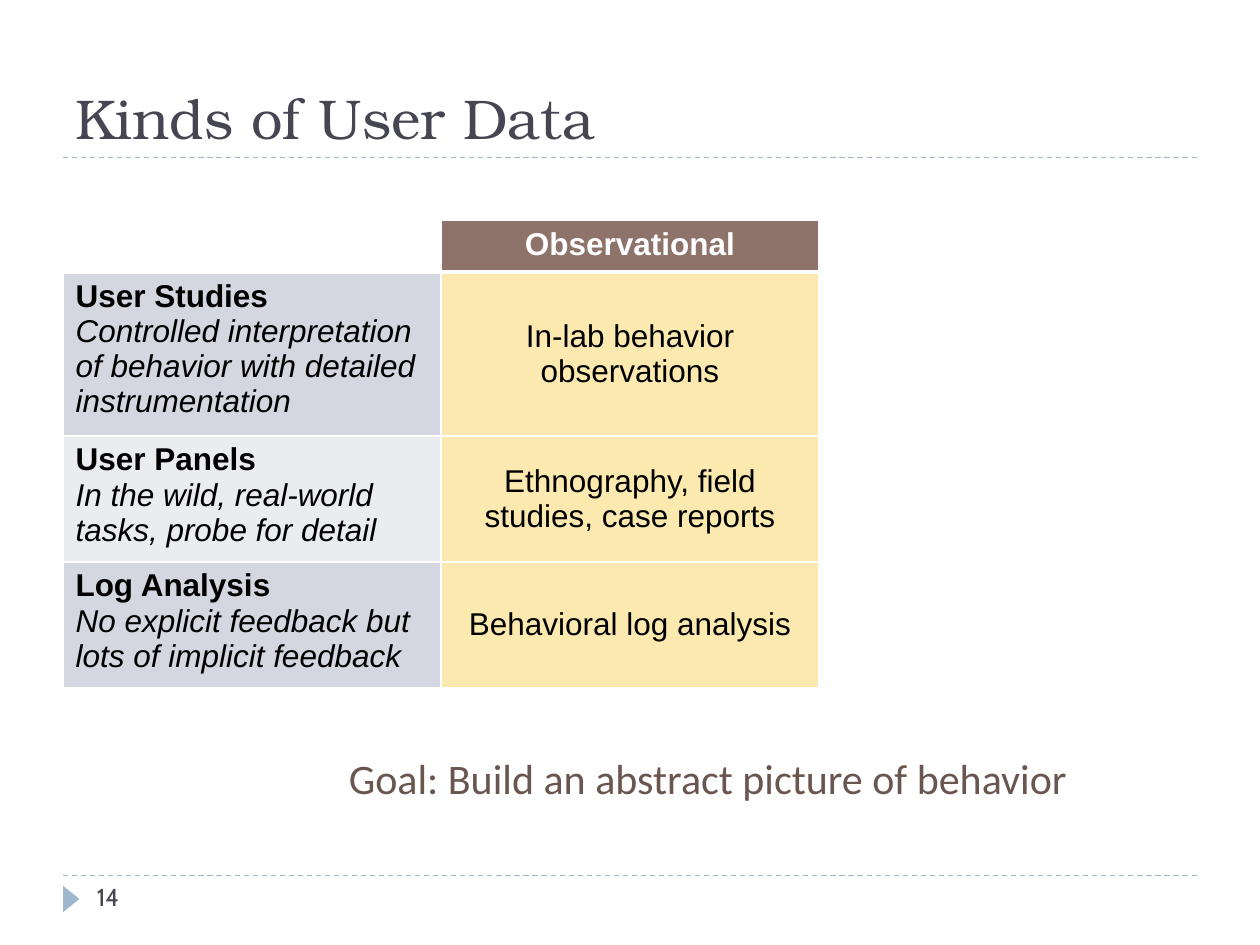
from dataclasses import dataclass

from lxml import etree
from pptx import Presentation
from pptx.dml.color import RGBColor
from pptx.enum.dml import MSO_LINE
from pptx.enum.shapes import MSO_CONNECTOR, MSO_SHAPE
from pptx.enum.text import MSO_ANCHOR, MSO_AUTO_SIZE, PP_ALIGN
from pptx.oxml.ns import qn
from pptx.util import Pt

PX = 9144  # 100 px to the inch

STRAIGHT = MSO_CONNECTOR.STRAIGHT
TRIANGLE = MSO_SHAPE.ISOSCELES_TRIANGLE
DASH = MSO_LINE.DASH
TOP, MIDDLE, BOTTOM = MSO_ANCHOR.TOP, MSO_ANCHOR.MIDDLE, MSO_ANCHOR.BOTTOM
LEFT, CENTER = PP_ALIGN.LEFT, PP_ALIGN.CENTER

WHITE = RGBColor(0xFF, 0xFF, 0xFF)
BLACK = RGBColor(0x00, 0x00, 0x00)
SLATE = RGBColor(0x46, 0x46, 0x53)
BLUE = RGBColor(0x9F, 0xB8, 0xCD)
BROWN = RGBColor(0x8E, 0x73, 0x6A)
DARK_BROWN = RGBColor(0x6A, 0x56, 0x50)
CREAM = RGBColor(0xFC, 0xE9, 0xAF)
BANDS = (RGBColor(0xD5, 0xD7, 0xE0), RGBColor(0xEB, 0xEC, 0xF0))

TITLE_FONT = {"name": "TeX Gyre Bonum", "size": Pt(32)}
NUMBER_FONT = {"name": "Cabin", "size": Pt(14)}
GOAL_FONT = {"name": "Calibri", "size": Pt(24)}
CELL_FONT = {"name": "Arial", "size": Pt(18), "bold": False, "italic": False}
BOLD = CELL_FONT | {"bold": True}
ITALIC = CELL_FONT | {"italic": True}


@dataclass
class Method:
    name: str
    detail: str
    observation: str
    height: int


METHODS = [
    Method("User Studies",
           "Controlled interpretation of behavior with detailed instrumentation",
           "In-lab behavior observations", 130),
    Method("User Panels", "In the wild, real-world tasks, probe for detail",
           "Ethnography, field studies, case reports", 100),
    Method("Log Analysis", "No explicit feedback but lots of implicit feedback",
           "Behavioral log analysis", 100),
]
HEADER_HEIGHT = 41
COLUMN_WIDTH = 300


def write(p, text: str, font: dict, color: RGBColor, align=LEFT) -> None:
    p.alignment = align
    r = p.add_run()
    r.text = text
    for key, value in font.items():
        setattr(r.font, key, value)
    r.font.color.rgb = color


def place(s, left: int, top: int, width: int, height: int) -> None:
    s.left, s.top, s.width, s.height = (v * PX for v in (left, top, width, height))


def add_rule(shapes, y: int) -> None:
    s = shapes.add_connector(STRAIGHT, 50 * PX, y * PX, 950 * PX, y * PX)
    s.line.color.rgb = BLUE
    s.line.width = Pt(0.75)
    s.line.dash_style = DASH
    etree.SubElement(s._element.spPr, qn("a:effectLst"))


def add_text(shapes, box: tuple, text: str, font: dict, color: RGBColor, wrap: bool) -> None:
    s = shapes.add_textbox(*(v * PX for v in box))
    s.text_frame.word_wrap = wrap
    write(s.text_frame.paragraphs[0], text, font, color)


def set_borders(cell, top: int = 1, bottom: int = 1) -> None:
    tc_pr = cell._tc.get_or_add_tcPr()
    for tag, points in (("lnL", 1), ("lnR", 1), ("lnT", top), ("lnB", bottom)):
        ln = etree.SubElement(tc_pr, qn(f"a:{tag}"), w=str(Pt(points)))
        fill = etree.SubElement(ln, qn("a:solidFill"))
        etree.SubElement(fill, qn("a:srgbClr"), val=str(WHITE))


def fill_cell(cell, color: RGBColor, lines: list, align=LEFT, anchor=TOP) -> None:
    cell.fill.solid()
    cell.fill.fore_color.rgb = color
    cell.vertical_anchor = anchor
    tf = cell.text_frame
    for i, (text, font, text_color) in enumerate(lines):
        p = tf.add_paragraph() if i else tf.paragraphs[0]
        write(p, text, font, text_color, align)


def add_methods_table(shapes) -> None:
    heights = [HEADER_HEIGHT] + [m.height for m in METHODS]
    frame = shapes.add_table(len(heights), 2, 50 * PX, 175 * PX,
                             2 * COLUMN_WIDTH * PX, sum(heights) * PX)
    table = frame.table
    table.first_row = table.horz_banding = False
    for column in table.columns:
        column.width = COLUMN_WIDTH * PX
    for i, (row, height) in enumerate(zip(table.rows, heights)):
        row.height = height * PX
        for cell in row.cells:
            set_borders(cell, top=3 if i == 1 else 1, bottom=3 if i == 0 else 1)

    # Header row
    table.cell(0, 0).fill.background()
    fill_cell(table.cell(0, 1), BROWN, [("Observational", BOLD, WHITE)], CENTER)

    # One row for each method
    for i, m in enumerate(METHODS):
        fill_cell(table.cell(i + 1, 0), BANDS[i % 2],
                  [(m.name, BOLD, BLACK), (m.detail, ITALIC, BLACK)])
        fill_cell(table.cell(i + 1, 1), CREAM,
                  [(m.observation, CELL_FONT, BLACK)], CENTER, MIDDLE)


def main() -> None:
    prs = Presentation()
    prs.slide_width, prs.slide_height = 1000 * PX, 750 * PX
    shapes = prs.slides.add_slide(prs.slide_layouts[5]).shapes

    # Rules and page marker
    for y in (695, 125):
        add_rule(shapes, y)
    marker = shapes.add_shape(TRIANGLE, 46 * PX, 707 * PX, 21 * PX, 13 * PX)
    marker.rotation = 90
    marker.shadow.inherit = False
    marker.fill.solid()
    marker.fill.fore_color.rgb = BLUE
    marker.line.fill.background()

    # Title
    place(shapes.title, 50, 17, 900, 108)
    tf = shapes.title.text_frame
    tf.auto_size = MSO_AUTO_SIZE.NONE
    tf.vertical_anchor = BOTTOM
    write(tf.paragraphs[0], "Kinds of User Data", TITLE_FONT, SLATE)

    add_methods_table(shapes)

    # Slide number and goal
    add_text(shapes, (67, 695, 217, 40), "14", NUMBER_FONT, SLATE, True)
    add_text(shapes, (267, 592, 595, 51), "Goal: Build an abstract picture of behavior",
             GOAL_FONT, DARK_BROWN, False)

    prs.save("out.pptx")


if __name__ == "__main__":
    main()
